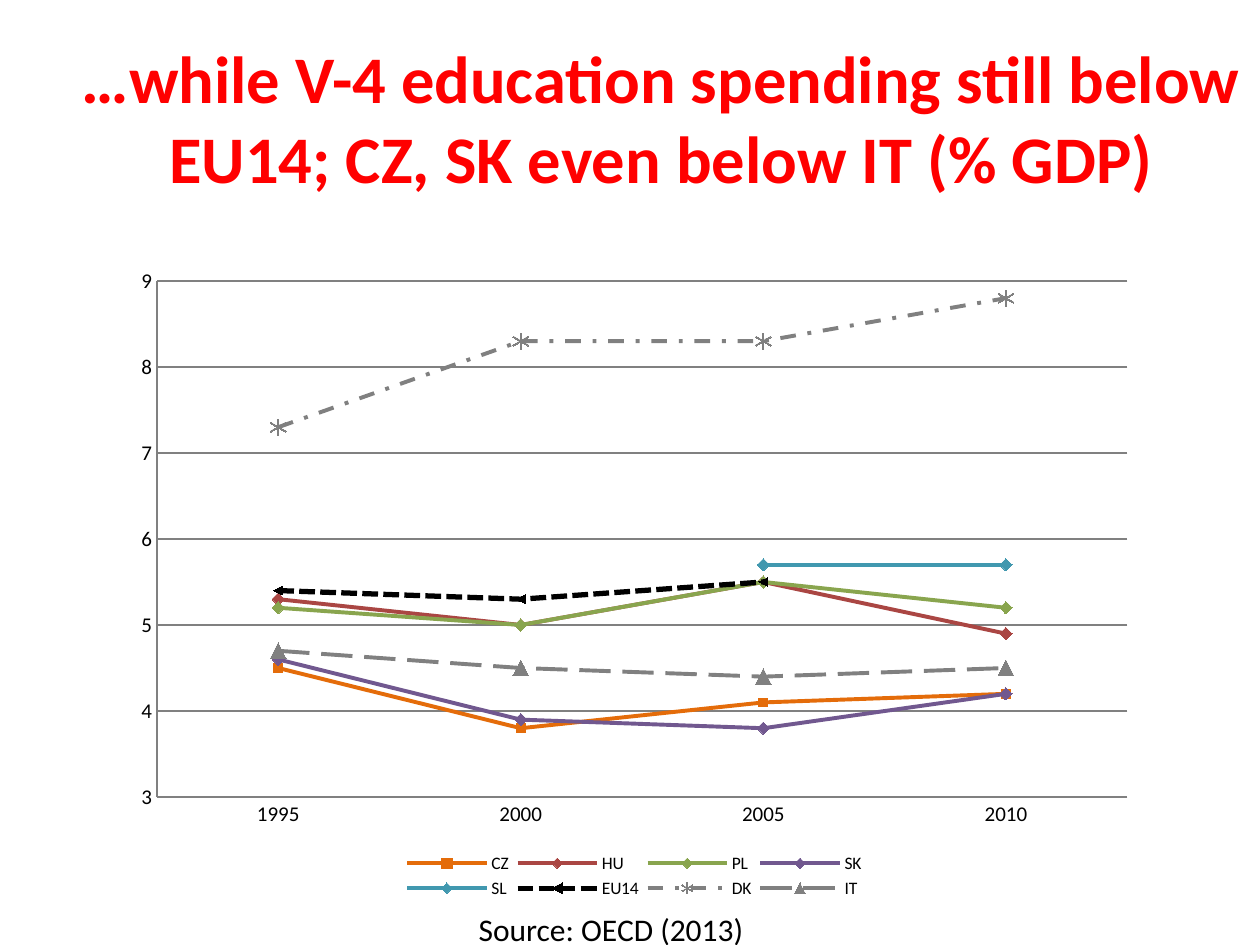
from dataclasses import dataclass

from lxml import etree
from pptx import Presentation
from pptx import util as u
from pptx.chart import data as chart_data
from pptx.dml import color
from pptx.enum import chart as kinds
from pptx.enum import dml, text
from pptx.oxml import ns


@dataclass(frozen=True)
class Theme:
    """Colours, font and type sizes of the deck."""
    font: str = "Calibri"
    title_color: str = "FF0000"
    ink: str = "000000"
    grid: str = "808080"
    title_size: float = 38
    source_size: float = 18
    axis_size: float = 12
    legend_size: float = 10


THEME = Theme()
MARK = kinds.XL_MARKER_STYLE
DASH = dml.MSO_LINE
YEARS = ["1995", "2000", "2005", "2010"]
SPENDING = [
    ("CZ", (4.5, 3.8, 4.1, 4.2), "E46C0A", 2.25, None, MARK.AUTOMATIC, 5),
    ("HU", (5.3, 5, 5.5, 4.9), "AA4643", 2.25, None, MARK.DIAMOND, 7),
    ("PL", (5.2, 5, 5.5, 5.2), "89A54E", 2.25, None, MARK.DIAMOND, 7),
    ("SK", (4.6, 3.9, 3.8, 4.2), "71588F", 2.25, None, MARK.DIAMOND, 7),
    ("SL", (None, None, 5.7, 5.7), "4198AF", 2.25, None, MARK.DIAMOND, 7),
    ("EU14", (5.4, 5.3, 5.5, None), "000000", 3, DASH.SQUARE_DOT, MARK.AUTOMATIC, 5),
    ("DK", (7.3, 8.3, 8.3, 8.8), "808080", 2.25, DASH.DASH_DOT, MARK.STAR, 9),
    ("IT", (4.7, 4.5, 4.4, 4.5), "808080", 2.25, DASH.LONG_DASH, MARK.TRIANGLE, 9),
]


def inches(*lengths):
    """Turn numbers into lengths."""
    return [u.Inches(length) for length in lengths]


def style_font(font, size, ink=THEME.ink, bold=False):
    """Apply the theme font with the given size and colour."""
    font.name, font.size, font.bold = THEME.font, u.Pt(size), bold
    font.color.rgb = color.RGBColor.from_string(ink)


def style_line(line, ink, width, dash=None):
    """Set the colour, width and dash of a line."""
    line.color.rgb = color.RGBColor.from_string(ink)
    line.width = u.Pt(width)
    if dash is not None:
        line.dash_style = dash


def add_text(page, area, words, size, ink=THEME.ink, bold=False, align=None, anchor=None):
    """Place one paragraph of text in the given area."""
    box = page.shapes.add_textbox(*inches(*area))
    frame = box.text_frame
    frame.text = words
    frame.word_wrap = True
    frame.vertical_anchor = anchor
    para = frame.paragraphs[0]
    para.alignment = align
    style_font(para.runs[0].font, size, ink, bold)


def set_layout(parent, index, area, inner=False):
    """Fix a chart part at fractions of the chart's size."""
    for old in parent.findall(ns.qn("c:layout")):
        parent.remove(old)
    layout = etree.Element(ns.qn("c:layout"))
    manual = etree.SubElement(layout, ns.qn("c:manualLayout"))
    settings = [("layoutTarget", "inner")] if inner else []
    settings += [("xMode", "edge"), ("yMode", "edge"), *zip("xywh", area)]
    for tag, value in settings:
        etree.SubElement(manual, ns.qn(f"c:{tag}")).set("val", str(value))
    parent.insert(index, layout)


def style_axes(chart):
    """Format the year axis and the share axis."""
    for axis in (chart.category_axis, chart.value_axis):
        axis.major_tick_mark = axis.minor_tick_mark = kinds.XL_TICK_MARK.NONE
        style_font(axis.tick_labels.font, THEME.axis_size)
        style_line(axis.format.line, THEME.grid, 0.75)
    shares = chart.value_axis
    shares.minimum_scale, shares.maximum_scale, shares.major_unit = 3, 9, 1
    shares.tick_labels.number_format = "0"
    shares.tick_labels.number_format_is_linked = False
    shares.has_major_gridlines = True
    style_line(shares.major_gridlines.format.line, THEME.grid, 0.75)


def style_series(series, ink, width, dash, mark, size):
    """Format one country's line and markers."""
    series.smooth = False
    style_line(series.format.line, ink, width, dash)
    marker = series.marker
    marker.style, marker.size = mark, size
    marker.format.fill.solid()
    marker.format.fill.fore_color.rgb = color.RGBColor.from_string(ink)
    style_line(marker.format.line, ink, 0.75)


def add_spending_chart(page, area):
    """Draw education spending by country in the given area."""
    data = chart_data.CategoryChartData(number_format="0.0")
    data.categories = YEARS
    for name, values, *_ in SPENDING:
        data.add_series(name, values)
    frame = page.shapes.add_chart(kinds.XL_CHART_TYPE.LINE_MARKERS, *inches(*area), data)
    chart = frame.chart
    chart.has_title = False
    style_font(chart.font, THEME.legend_size)
    plot = chart.plots[0]
    plot.vary_by_categories = False
    for series, (_, _, *look) in zip(plot.series, SPENDING):
        style_series(series, *look)
    style_axes(chart)
    chart.has_legend = True
    legend = chart.legend
    legend.position = kinds.XL_LEGEND_POSITION.BOTTOM
    legend.include_in_layout = False
    style_font(legend.font, THEME.legend_size)
    root = chart.element
    set_layout(root.find(f".//{ns.qn('c:plotArea')}"), 0, (0.035, 0.039, 0.945, 0.797), True)
    set_layout(root.find(f".//{ns.qn('c:legend')}"), 1, (0.27, 0.915, 0.46, 0.085))


def build_page(deck):
    """Build the education spending slide."""
    page = deck.slides.add_slide(deck.slide_layouts[6])
    add_text(page, (0.5, 0.3, 9.5, 1.25),
             "…while V-4 education spending still below EU14; CZ, SK even below IT (% GDP)",
             THEME.title_size, THEME.title_color, True,
             text.PP_ALIGN.CENTER, text.MSO_ANCHOR.MIDDLE)
    add_spending_chart(page, (0.96, 2.03, 8.15, 5.14))
    add_text(page, (3.7, 7.17, 2.89, 0.4), "Source: OECD (2013)", THEME.source_size)


def main():
    """Create and save the deck."""
    deck = Presentation()
    deck.slide_width, deck.slide_height = inches(10, 7.5)
    build_page(deck)
    deck.save("out.pptx")


if __name__ == "__main__":
    main()
